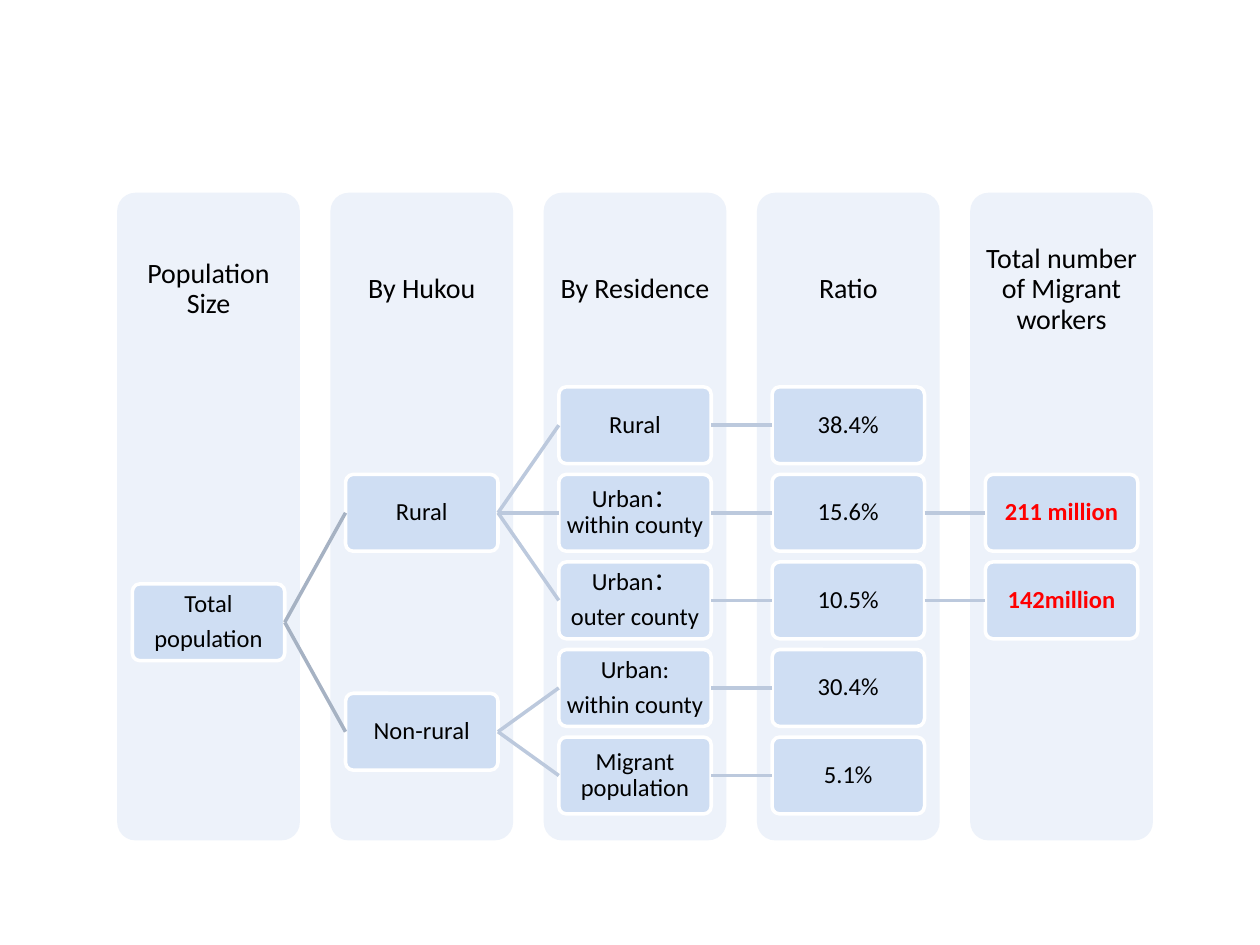
from dataclasses import dataclass

from lxml import etree
from pptx import Presentation
from pptx.dml.color import RGBColor
from pptx.enum.shapes import MSO_CONNECTOR, MSO_SHAPE
from pptx.enum.text import MSO_ANCHOR, PP_ALIGN
from pptx.oxml.ns import qn
from pptx.util import Inches, Pt

ROUNDED = MSO_SHAPE.ROUNDED_RECTANGLE
STRAIGHT = MSO_CONNECTOR.STRAIGHT
MIDDLE = MSO_ANCHOR.MIDDLE
CENTER = PP_ALIGN.CENTER
LEFT_SIDE, RIGHT_SIDE = 1, 3


@dataclass(frozen=True)
class Theme:
    font: str = "Calibri"
    header_size: float = 16
    node_size: float = 14
    gap: float = 4.9
    line_width: float = 2
    text: str = "000000"
    accent: str = "FF0000"
    column: str = "EDF2FA"
    node: str = "CFDEF3"
    border: str = "FFFFFF"
    first_link: str = "A6B2C3"
    link: str = "BCC9DD"


theme = Theme()
rgb = RGBColor.from_string


def write(shape, text, size, inset, color=theme.text, bold=False):
    tf = shape.text_frame
    tf.text = text
    tf.word_wrap = True
    tf.vertical_anchor = MIDDLE
    tf.margin_left = tf.margin_right = Inches(inset)
    tf.margin_top = tf.margin_bottom = Inches(inset)
    for i, p in enumerate(tf.paragraphs):
        p.alignment = CENTER
        p.line_spacing = 0.9
        if i:
            p.space_before = Pt(theme.gap)
        for r in p.runs:
            r.font.name = theme.font
            r.font.size = Pt(size)
            r.font.bold = bold
            r.font.color.rgb = rgb(color)


def add_rounded(x, y, w, h, fill):
    sp = s.shapes.add_shape(ROUNDED, Inches(x), Inches(y), Inches(w), Inches(h))
    sp.adjustments[0] = 0.1
    sp.shadow.inherit = False
    sp.fill.solid()
    sp.fill.fore_color.rgb = rgb(fill)
    sp.line.fill.background()
    return sp


prs = Presentation()
prs.slide_width, prs.slide_height = Inches(10), Inches(7.5)
s = prs.slides.add_slide(prs.slide_layouts[6])

# Grid
LEFT, TOP, COL_W, COL_H, HEADER_H = 0.93, 1.53, 1.45, 5.14, 1.54
COL_STEP = (7.7 - LEFT) / 4
NODE_W, NODE_H, NODE_TOP = 1.21, 0.61, 3.07
ROW_STEP = (5.85 - NODE_TOP) / 4

# Columns with headers
headers = ["Population Size", "By Hukou", "By Residence", "Ratio",
           "Total number of Migrant workers"]
for col, header in enumerate(headers):
    x = LEFT + col * COL_STEP
    add_rounded(x, TOP, COL_W, COL_H, theme.column)
    box = s.shapes.add_textbox(Inches(x), Inches(TOP), Inches(COL_W), Inches(HEADER_H))
    write(box, header, theme.header_size, 0.12)

# Tree nodes: key, parent, column, row, text
tree = [
    ("total", None, 0, 2.25, "Total\npopulation"),
    ("rural", "total", 1, 1, "Rural"),
    ("non-rural", "total", 1, 3.5, "Non-rural"),
    ("stayed", "rural", 2, 0, "Rural"),
    ("within", "rural", 2, 1, "Urban：within county"),
    ("outer", "rural", 2, 2, "Urban：\nouter county"),
    ("urban", "non-rural", 2, 3, "Urban:\nwithin county"),
    ("migrant", "non-rural", 2, 4, "Migrant population"),
    ("stayed ratio", "stayed", 3, 0, "38.4%"),
    ("within ratio", "within", 3, 1, "15.6%"),
    ("outer ratio", "outer", 3, 2, "10.5%"),
    ("urban ratio", "urban", 3, 3, "30.4%"),
    ("migrant ratio", "migrant", 3, 4, "5.1%"),
    ("within workers", "within ratio", 4, 1, "211 million"),
    ("outer workers", "outer ratio", 4, 2, "142million"),
]
nodes = {}
for key, parent, col, row, text in tree:
    x = LEFT + col * COL_STEP + (COL_W - NODE_W) / 2
    sp = add_rounded(x, NODE_TOP + row * ROW_STEP, NODE_W, NODE_H, theme.node)
    sp.line.color.rgb = rgb(theme.border)
    sp.line.width = Pt(theme.line_width)
    is_workers = col == 4
    write(sp, text, theme.node_size, 0.01,
          theme.accent if is_workers else theme.text, is_workers)
    nodes[key] = sp

# Links from each parent to its children
for key, parent, col, row, text in tree:
    if parent is None:
        continue
    link = s.shapes.add_connector(STRAIGHT, 0, 0, 0, 0)
    link.begin_connect(nodes[parent], RIGHT_SIDE)
    link.end_connect(nodes[key], LEFT_SIDE)
    link.line.color.rgb = rgb(theme.first_link if col == 1 else theme.link)
    link.line.width = Pt(theme.line_width)
    etree.SubElement(link._element.spPr, qn("a:effectLst"))

prs.save("out.pptx")
